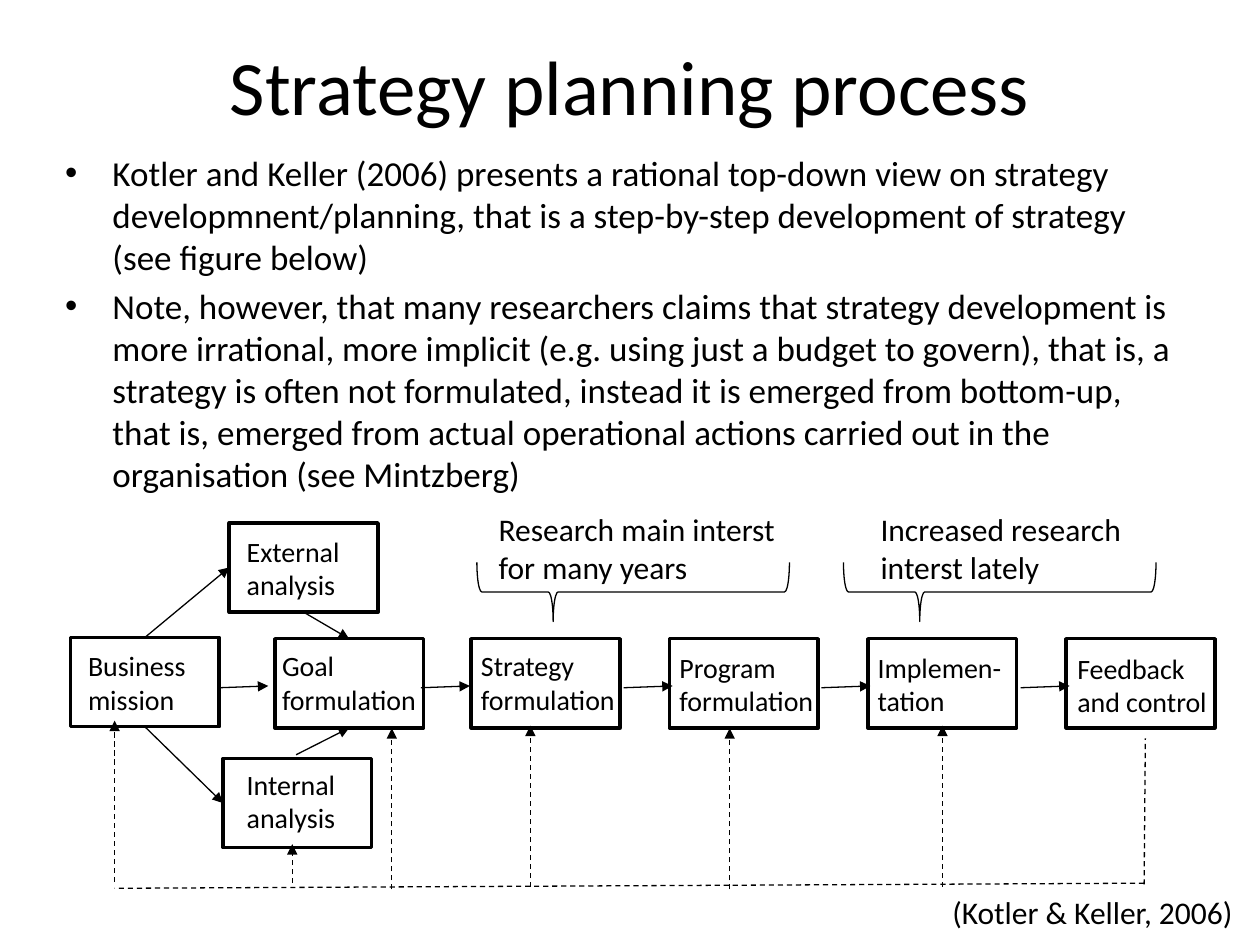
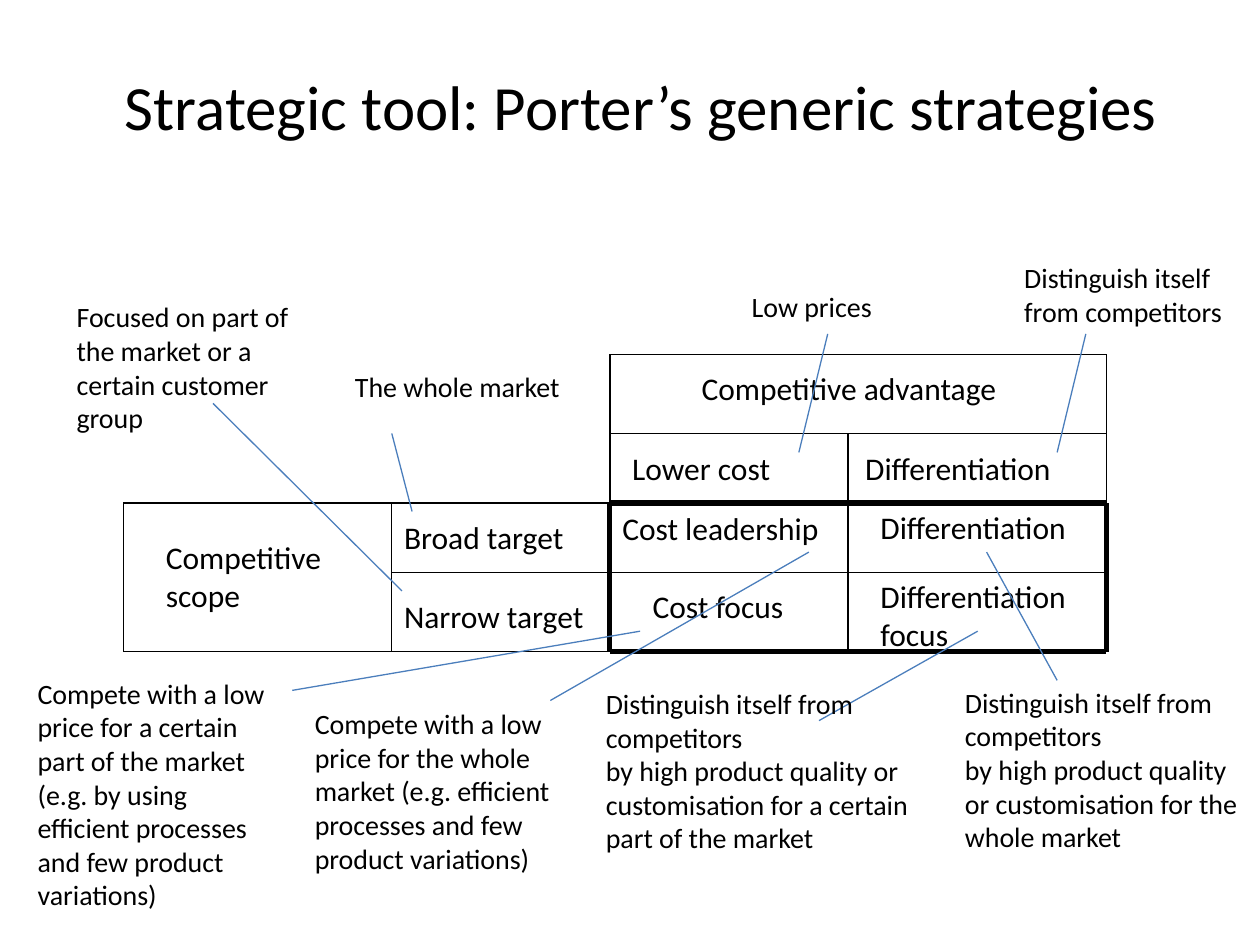
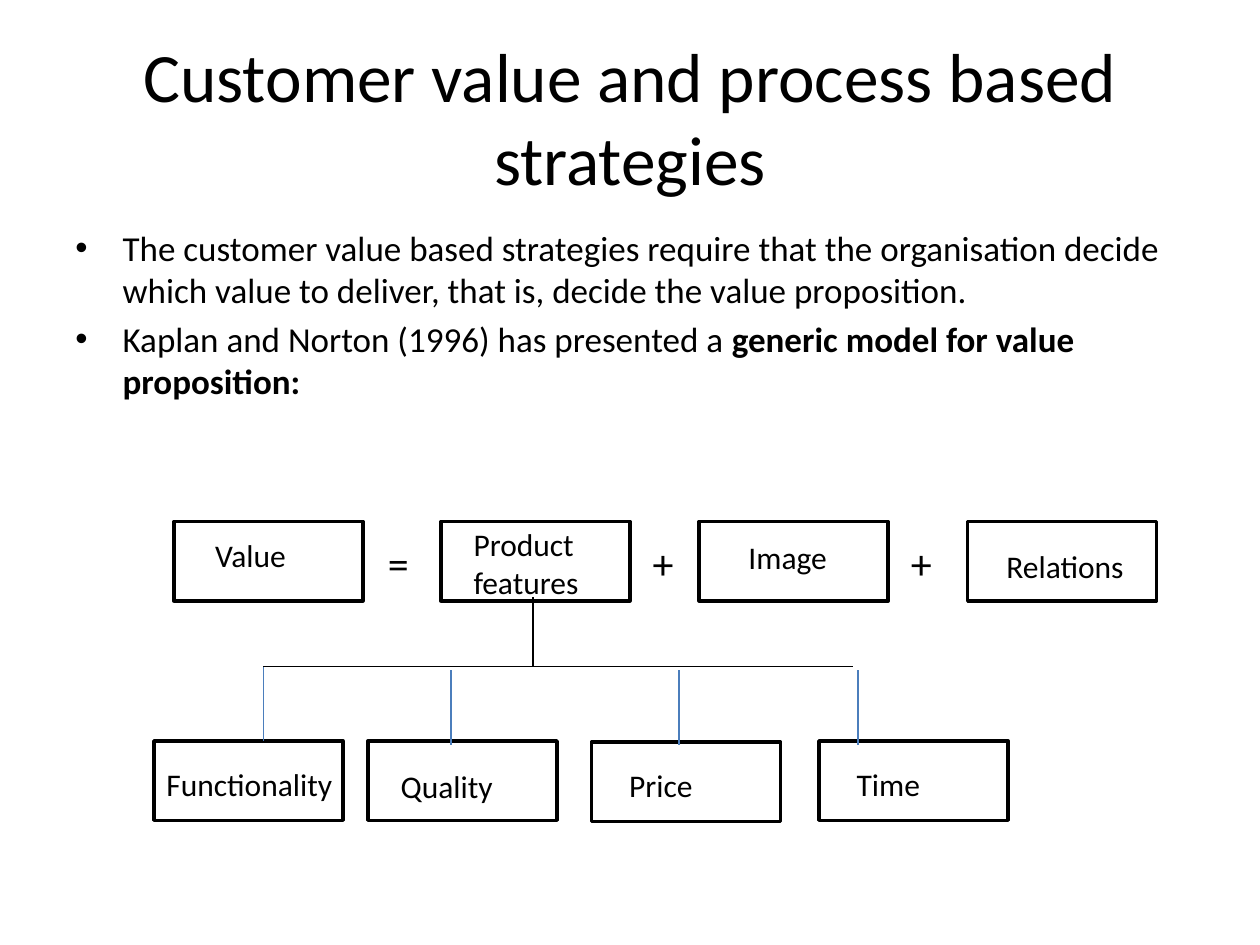
from lxml import etree
from pptx import Presentation
from pptx import util as u
from pptx.dml import color
from pptx.enum import dml, shapes, text
from pptx.oxml import ns

Pt = u.Pt
FONT, BLACK, WHITE, BLUE = "Calibri", "000000", "FFFFFF", "4B7EBC"


def rgb(value):
    """Turn a hex string into a colour."""
    return color.RGBColor.from_string(value)


def style(p, size):
    """Give a paragraph the shared font."""
    p.font.name, p.font.size = FONT, Pt(size)
    p.font.color.rgb = rgb(BLACK)


def label(s, words, x, y, w, h, size=18):
    """Add a wrapped text box, one paragraph per line of words."""
    tf = s.shapes.add_textbox(Pt(x), Pt(y), Pt(w), Pt(h)).text_frame
    tf.word_wrap = True
    tf.auto_size = text.MSO_AUTO_SIZE.SHAPE_TO_FIT_TEXT
    tf.text = words
    for p in tf.paragraphs:
        style(p, size)
    return tf


def title(s, words, x, y, w, size):
    """Add a centred slide title."""
    tf = label(s, words, x, y, w, 90, size)
    tf.auto_size = text.MSO_AUTO_SIZE.NONE
    tf.vertical_anchor = text.MSO_ANCHOR.MIDDLE
    tf.paragraphs[0].alignment = text.PP_ALIGN.CENTER


def bullets(s, items, x, y, w, h):
    """Add bulleted paragraphs, each a plain part and a bold part."""
    tf = label(s, "\n".join(plain for plain, bold in items), x, y, w, h, 20)
    tf.auto_size = text.MSO_AUTO_SIZE.NONE
    for p, (plain, bold) in zip(tf.paragraphs, items):
        p.space_before = Pt(4)
        if bold:
            r = p.add_run()
            r.text, r.font.bold = bold, True
        pPr = p._p.get_or_add_pPr()
        pPr.set("marL", str(Pt(27)))
        pPr.set("indent", str(Pt(-27)))
        bu_font = etree.Element(ns.qn("a:buFont"), typeface="Arial")
        bu_char = etree.Element(ns.qn("a:buChar"), char="•")
        pPr.insert_element_before(bu_font, "a:buChar", "a:tabLst", "a:defRPr")
        pPr.insert_element_before(bu_char, "a:tabLst", "a:defRPr")


def line(s, x1, y1, x2, y2, hue=BLACK, width=0.75, arrow=False, dashed=False):
    """Add a straight line, with an arrowhead or dashes if asked."""
    c = s.shapes.add_connector(
        shapes.MSO_CONNECTOR.STRAIGHT, Pt(x1), Pt(y1), Pt(x2), Pt(y2))
    c.line.color.rgb, c.line.width = rgb(hue), Pt(width)
    if dashed:
        c.line.dash_style = dml.MSO_LINE.DASH
    if arrow:
        etree.SubElement(c.line._get_or_add_ln(), ns.qn("a:tailEnd"), type="triangle")
    etree.SubElement(c._element.spPr, ns.qn("a:effectLst"))
    return c


def box(s, words, x, y, w, h, dx, dy, text_w, text_h, size):
    """Add an outlined box with its label set off by dx, dy."""
    sp = s.shapes.add_shape(shapes.MSO_SHAPE.RECTANGLE, Pt(x), Pt(y), Pt(w), Pt(h))
    sp.shadow.inherit = False
    sp.fill.solid()
    sp.fill.fore_color.rgb = rgb(WHITE)
    sp.line.color.rgb, sp.line.width = rgb(BLACK), Pt(2)
    label(s, words, x + dx, y + dy, text_w, text_h, size)
    return sp


def brace(s, words, x, y, text_dx, text_w):
    """Add a brace opening upwards around its heading."""
    sp = s.shapes.add_shape(
        shapes.MSO_SHAPE.RIGHT_BRACE, Pt(x), Pt(y), Pt(33.8), Pt(178.6))
    sp.rotation = 90
    sp.adjustments[0], sp.adjustments[1] = 0.083, 0.756
    sp.shadow.inherit = False
    sp.fill.background()
    sp.line.color.rgb, sp.line.width = rgb(BLACK), Pt(0.75)
    label(s, words, x + text_dx, y + 39, text_w, 51)


def planning_figure(s, x, y):
    """Draw the planning steps, their arrows and the feedback loop."""
    step, start = 113.3, 229.3
    steps = {}
    for name, bx, by, dx, dy in (
            ("Business mission", 0.3, 76.3, 2.9, 2.9),
            ("External analysis", 91, 10.8, 2.9, 2.9),
            ("Goal formulation", 117, 77, -2.9, 2.2),
            ("Internal analysis", 87.4, 145.4, 6.5, 1.5),
            ("Strategy formulation", start, 77, -1.5, 2.2),
            ("Program formulation", start + step, 77, -1.4, 2.9),
            ("Implemen-tation", start + 2 * step, 77, -1.5, 2.9),
            ("Feedback and control", start + 3 * step, 77, -0.7, 3.6)):
        text_w = 75.6 if name.startswith("Business") else 92
        steps[name.split()[0]] = box(
            s, name, x + bx, y + by, 85, 51, dx, dy, text_w, 46, 16)
    for tail, out, head, into in (
            ("Business", 0, "External", 1), ("Business", 2, "Internal", 1),
            ("External", 2, "Goal", 0)):
        c = line(s, x, y, x, y, arrow=True)
        c.begin_connect(steps[tail], out)
        c.end_connect(steps[head], into)
    c = line(s, x + 129.2, y + 143.3, x + 160, y + 128, arrow=True)
    c.end_connect(steps["Goal"], 2)
    for ax in (85.3, 200.5, 316.4, 429.4, 543.2):
        line(s, x + ax, y + 105, x + ax + 28, y + 104, arrow=True)
    for ax, low, high in (
            (498.6, 219, 126.7), (377, 220.3, 128.2), (263.1, 219, 126.7),
            (183.9, 220.3, 128.2), (25.5, 216, 123.8), (127, 216.7, 194.4)):
        line(s, x + ax, y + low, x + ax, y + high, arrow=True, dashed=True)
    line(s, x + 613.8, y + 217.4, x + 614.5, y + 133.9, dashed=True)
    line(s, x + 613.8, y + 216.7, x + 25.5, y + 219.6, dashed=True)
    brace(s, "Research main interst for many years", x + 304.9, y - 39, -67, 172.8)
    brace(s, "Increased research interst lately", x + 514.4, y - 39, -58.3, 167)
    label(s, "(Kotler & Keller, 2006)", x + 497.1, y + 219, 182.9, 28.8)


def strategy_grid(s, x, y):
    """Draw the matrix of strategies from its column and row lines."""
    cols = [x + d for d in (0, 153.3, 278, 414, 561.6)]
    rows = [y + d for d in (0, 45.4, 85, 124.6, 169.9)]
    thin = ((0, 4, 4, 4), (0, 2, 4, 2), (2, 0, 4, 0), (4, 0, 4, 4), (0, 2, 0, 4),
            (2, 0, 2, 4), (1, 2, 1, 4), (1, 3, 4, 3), (2, 1, 4, 1), (3, 1, 3, 4))
    thick = ((2, 2, 4, 2), (2, 4, 4, 4), (4, 2, 4, 4), (2, 2, 2, 4))
    for width, rules in ((0.75, thin), (3, thick)):
        for c1, r1, c2, r2 in rules:
            line(s, cols[c1], rows[r1], cols[c2], rows[r2], width=width)
    for words, c, r, dx, dy, w, h in (
            ("Competitive scope", 0, 2, 17.2, 16.5, 118.8, 51),
            ("Competitive advantage", 2, 0, 45.3, 5, 223, 28.8),
            ("Lower cost", 2, 1, 5.7, 5, 223, 28.8),
            ("Differentiation", 3, 1, 2.8, 5, 223, 28.8),
            ("Differentiation", 3, 2, 11.5, -0.7, 223, 28.8),
            ("Differentiation\nfocus", 3, 3, 11.5, -0.7, 223, 51),
            ("Cost leadership", 2, 2, 0, 0, 223, 28.8),
            ("Cost focus", 2, 3, 17.3, 5, 223, 28.8),
            ("Broad target", 1, 2, 0, 5, 223, 28.8),
            ("Narrow target", 1, 3, 0, 10.8, 223, 28.8)):
        label(s, words, cols[c] + dx, rows[r] + dy, w, h)


def strategy_notes(s, x, y):
    """Place the explanations around the matrix with their pointers."""
    for words, (nx, ny, w, h), (x1, y1, x2, y2) in (
            ("Distinguish itself from competitors\n"
             "by high product quality or customisation for the whole market",
             (473.8, 185.6, 175.5, 104.4), (493.3, 113, 533.6, 186.3)),
            ("Distinguish itself from competitors\n"
             "by high product quality or customisation for a certain part of the market",
             (268.6, 186.3, 190.8, 104.4), (488.2, 158.2, 397.5, 209.3)),
            ("Compete with a low price for a certain part of the market "
             "(e.g. by using efficient processes and few product variations)",
             (-56.1, 180.5, 147.6, 143.3), (295.3, 158.2, 96.5, 192)),
            ("Compete with a low price for the whole market "
             "(e.g. efficient processes and few product variations)",
             (102.3, 197.8, 158.4, 104.4), (391.7, 113, 244, 197.8)),
            ("The whole market", (125.3, 5, 141.8, 26.6), (165, 89.8, 153.4, 45.2)),
            ("Focused on part of the market or a certain customer group",
             (-33.8, -34.7, 141.8, 85), (159.2, 135.2, 51.2, 28)),
            ("Low prices", (352, -40.5, 141.8, 26.6), (402.5, -11.7, 386, 56)),
            ("Distinguish itself from competitors",
             (507.7, -57, 141.8, 46), (550, -11.7, 533.6, 56))):
        line(s, x + x1, y + y1, x + x2, y + y2, BLUE)
        label(s, words, x + nx, y + ny, w, h, 16)


def value_figure(s, x, y):
    """Draw the value equation and the tree of product features."""
    for words, bx, by, dx, dy, w, h in (
            ("Value", 11.4, 1, 16.5, 5, 149.8, 28.8),
            ("Product features", 164, 1, 11.5, -1.5, 109.4, 51),
            ("Image", 311.6, 1, 21, 5.7, 109.4, 28.8),
            ("Relations", 465, 1, 15, 10.8, 109.4, 28.8),
            ("Functionality", 0, 126.4, 0, 10, 109.4, 28.8),
            ("Quality", 122.4, 126.4, 11.5, 11.5, 109.4, 28.8),
            ("Price", 250, 127, 14.4, 10, 109.4, 28.8),
            ("Time", 380, 126.4, 14.4, 10, 109.4, 28.8)):
        box(s, words, x + bx, y + by, 108, 45.4, dx, dy, w, h, 18)
    for sign, dx in (("=", 126.6), ("+", 277.8), ("+", 425.4)):
        label(s, sign, x + dx, y + 6.8, 85, 36, 24)
    line(s, x + 216.6, y + 44.3, x + 216.6, y + 84)
    line(s, x + 62.5, y + 84, x + 399.4, y + 84)
    for dx, dy in ((62.5, 84), (169.8, 86), (300, 86), (402.3, 86)):
        line(s, x + dx, y + dy, x + dx, y + dy + 42.5, BLUE)


def planning_slide(s):
    """Fill the slide on the planning process."""
    title(s, "Strategy planning process", 36, 3.6, 648, 44)
    bullets(s, (
        ("Kotler and Keller (2006) presents a rational top-down view on strategy "
         "developmnent/planning, that is a step-by-step development of strategy "
         "(see figure below)", ""),
        ("Note, however, that many researchers claims that strategy development is "
         "more irrational, more implicit (e.g. using just a budget to govern), that is, "
         "a strategy is often not formulated, instead it is emerged from bottom-up, "
         "that is, emerged from actual operational actions carried out in the "
         "organisation (see Mintzberg)", "")), 30.2, 82.8, 648, 356.4)
    planning_figure(s, 40, 288)


def generic_slide(s):
    """Fill the slide on generic strategies."""
    title(s, "Strategic tool: Porter’s generic strategies", 14.4, 15.1, 704, 36)
    strategy_grid(s, 70.5, 202.5)
    strategy_notes(s, 70.5, 202.5)


def value_slide(s):
    """Fill the slide on customer value."""
    title(s, "Customer value and process based strategies", 36, 21.6, 648, 39.6)
    bullets(s, (
        ("The customer value based strategies require that the organisation decide "
         "which value to deliver, that is, decide the value proposition.", ""),
        ("Kaplan and Norton (1996) has presented a ",
         "generic model for value proposition:")), 36, 126, 648, 356.4)
    value_figure(s, 88, 297)


def main():
    """Build the three slides and save them."""
    prs = Presentation()
    prs.slide_width, prs.slide_height = Pt(720), Pt(540)
    for fill in (planning_slide, generic_slide, value_slide):
        fill(prs.slides.add_slide(prs.slide_layouts[6]))
    prs.save("out.pptx")


if __name__ == "__main__":
    main()
